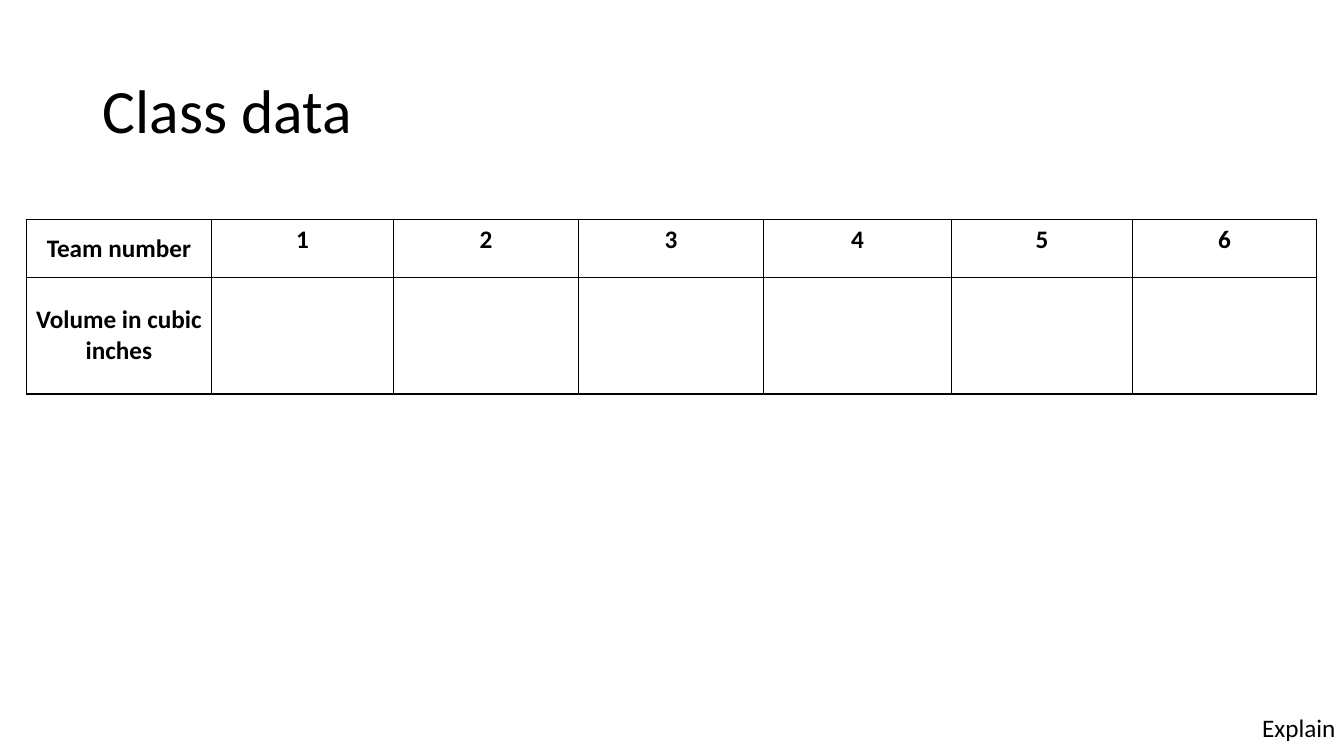
"""Build the class data slide with its team volume table."""
from pptx import Presentation
from pptx.dml.color import RGBColor
from pptx.enum.text import MSO_ANCHOR as ANCHOR, MSO_AUTO_SIZE as AUTO, PP_ALIGN as ALIGN
from pptx.oxml import parse_xml
from pptx.oxml.ns import nsdecls
from pptx.util import Inches, Pt

TITLE = "Class data"
FOOTER = "Explain"
ROWS = [
    ["Team number", "1", "2", "3", "4", "5", "6"],
    ["Volume in cubic inches"] + [""] * 6,
]
COL_WIDTHS = [1.84, 1.8, 1.84, 1.83, 1.87, 1.79, 1.83]
ROW_HEIGHTS = [0.57, 1.16]
BLACK = "000000"


def color(value):
    return RGBColor.from_string(value)


def style(p, size, bold=False):
    p.font.name = "Calibri"
    p.font.size = Pt(size)
    p.font.bold = bold
    p.font.color.rgb = color(BLACK)


def add_borders(cell):
    tcPr = cell._tc.get_or_add_tcPr()
    for i, side in enumerate(("lnL", "lnR", "lnT", "lnB")):
        tcPr.insert(i, parse_xml(
            f'<a:{side} {nsdecls("a")} w="{Pt(1)}"><a:solidFill>'
            f'<a:srgbClr val="{BLACK}"/></a:solidFill></a:{side}>'))


def add_title(s):
    title = s.shapes.title
    title.left, title.top = Inches(0.92), Inches(0.4)
    title.width, title.height = Inches(11.5), Inches(1.45)
    tf = title.text_frame
    tf.text = TITLE
    tf.vertical_anchor = ANCHOR.MIDDLE
    p = tf.paragraphs[0]
    p.alignment = ALIGN.LEFT
    p.line_spacing = 0.9
    style(p, 44)


def add_data_table(s):
    table = s.shapes.add_table(
        len(ROWS), len(COL_WIDTHS), Inches(0.26), Inches(2.18),
        Inches(sum(COL_WIDTHS)), Inches(sum(ROW_HEIGHTS))).table
    table.first_row = table.horz_banding = False
    for column, width in zip(table.columns, COL_WIDTHS):
        column.width = Inches(width)
    for row, height, texts in zip(table.rows, ROW_HEIGHTS, ROWS):
        row.height = Inches(height)
        for i, (cell, text) in enumerate(zip(row.cells, texts)):
            cell.text = text
            cell.fill.background()
            cell.margin_left = cell.margin_right = Inches(0.07)
            cell.vertical_anchor = ANCHOR.TOP if i else ANCHOR.MIDDLE
            p = cell.text_frame.paragraphs[0]
            p.alignment = ALIGN.CENTER
            style(p, 18, bold=True)
            add_borders(cell)


def add_footer(s):
    box = s.shapes.add_textbox(Inches(12.42), Inches(7.02), Inches(0.94), Inches(0.4))
    tf = box.text_frame
    tf.text = FOOTER
    tf.word_wrap = False
    tf.auto_size = AUTO.SHAPE_TO_FIT_TEXT
    style(tf.paragraphs[0], 18)


def main():
    prs = Presentation()
    prs.slide_width, prs.slide_height = Inches(13.33), Inches(7.5)
    s = prs.slides.add_slide(prs.slide_layouts[5])
    add_title(s)
    add_data_table(s)
    add_footer(s)
    prs.save("out.pptx")


if __name__ == "__main__":
    main()
